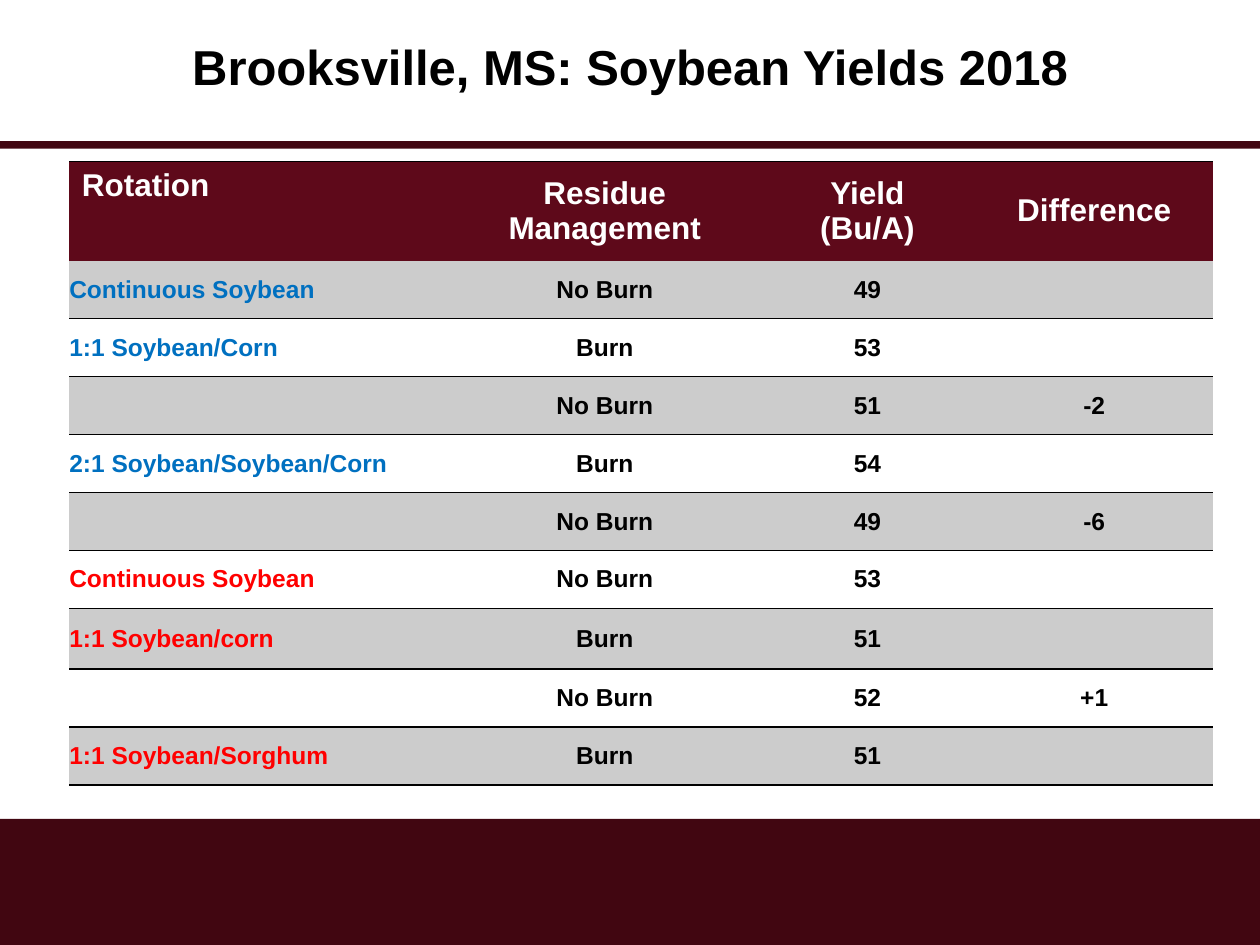
from lxml import etree
from pptx import Presentation
from pptx import util as u
from pptx.dml.color import RGBColor
from pptx.enum import shapes, text
from pptx.oxml import ns

COLORS = {
    "maroon": "410611",
    "header": "5E091A",
    "band": "CCCCCC",
    "black": "000000",
    "white": "FFFFFF",
    "blue": "0070C0",
    "red": "FF0000",
}
FONT = "Arial"
COLUMN_WIDTHS = [3.02, 2.46, 1.71, 1.89]
ROW_HEIGHTS = [0.79] + [0.46] * 6 + [0.48] + [0.46] * 2
HEADINGS = ["Rotation", "Residue Management", "Yield\n(Bu/A)", "Difference"]
YIELDS = [
    ("Continuous Soybean", "No Burn", "49", ""),
    ("1:1 Soybean/Corn", "Burn", "53", ""),
    ("", "No Burn", "51", "-2"),
    ("2:1 Soybean/Soybean/Corn", "Burn", "54", ""),
    ("", "No Burn", "49", "-6"),
    ("Continuous Soybean", "No Burn", "53", ""),
    ("1:1 Soybean/corn", "Burn", "51", ""),
    ("", "No Burn", "52", "+1"),
    ("1:1 Soybean/Sorghum", "Burn", "51", ""),
]
BLUE_ROWS = 5


def color(name):
    return RGBColor.from_string(COLORS[name])


def add_bar(page, left, top, width, height):
    bar = page.shapes.add_shape(
        shapes.MSO_SHAPE.RECTANGLE,
        u.Inches(left), u.Inches(top), u.Inches(width), u.Inches(height))
    bar.shadow.inherit = False
    bar.fill.solid()
    bar.fill.fore_color.rgb = color("maroon")
    bar.line.fill.background()


def format_text(frame, size, color_name, align):
    for para in frame.paragraphs:
        para.alignment = align
        for span in para.runs:
            span.font.name = FONT
            span.font.size = u.Pt(size)
            span.font.bold = True
            span.font.color.rgb = color(color_name)


def add_title(page, left, top, width, height):
    title = page.shapes.title
    title.left, title.top = u.Inches(left), u.Inches(top)
    title.width, title.height = u.Inches(width), u.Inches(height)
    frame = title.text_frame
    frame.text = "Brooksville, MS: Soybean Yields 2018"
    frame.word_wrap = True
    frame.auto_size = text.MSO_AUTO_SIZE.NONE
    frame.vertical_anchor = text.MSO_ANCHOR.MIDDLE
    frame.paragraphs[0].line_spacing = 0.9
    format_text(frame, 28, "black", text.PP_ALIGN.CENTER)


def set_borders(cell, ruled_sides):
    properties = cell._tc.get_or_add_tcPr()
    for side in "LRTB":
        line = etree.SubElement(properties, ns.qn(f"a:ln{side}"), w=str(u.Pt(1)))
        if side in ruled_sides:
            fill = etree.SubElement(line, ns.qn("a:solidFill"))
            etree.SubElement(fill, ns.qn("a:srgbClr"), val=COLORS["black"])
        else:
            etree.SubElement(line, ns.qn("a:noFill"))


def format_cell(cell, row, column):
    is_header = row == 0
    if is_header:
        ruled_sides = "T"
    elif row == 1:
        ruled_sides = "B"
    else:
        ruled_sides = "TB"
    set_borders(cell, ruled_sides)

    if is_header or row % 2:
        cell.fill.solid()
        cell.fill.fore_color.rgb = color("header" if is_header else "band")
    else:
        cell.fill.background()

    if not is_header:
        cell.margin_left = cell.margin_right = 0
        cell.margin_top = cell.margin_bottom = 0
    if not (is_header and column == 0):
        cell.vertical_anchor = text.MSO_ANCHOR.MIDDLE

    if is_header:
        color_name = "white"
    elif column == 0:
        color_name = "blue" if row <= BLUE_ROWS else "red"
    else:
        color_name = "black"
    align = text.PP_ALIGN.CENTER if column else text.PP_ALIGN.LEFT
    format_text(cell.text_frame, 18 if is_header else 14, color_name, align)


def add_yield_table(page, left, top):
    rows = [HEADINGS] + YIELDS
    table = page.shapes.add_table(
        len(rows), len(HEADINGS), u.Inches(left), u.Inches(top),
        u.Inches(sum(COLUMN_WIDTHS)), u.Inches(sum(ROW_HEIGHTS))).table
    for column, width in zip(table.columns, COLUMN_WIDTHS):
        column.width = u.Inches(width)
    for row, height in zip(table.rows, ROW_HEIGHTS):
        row.height = u.Inches(height)
    for row, values in enumerate(rows):
        for column, value in enumerate(values):
            cell = table.cell(row, column)
            cell.text = value
            format_cell(cell, row, column)


def main():
    deck = Presentation()
    deck.slide_width, deck.slide_height = u.Inches(10), u.Inches(7.5)
    page = deck.slides.add_slide(deck.slide_layouts[5])
    add_bar(page, 0, 6.5, 10, 1)
    add_title(page, 0, 0, 10, 1.11)
    add_bar(page, 0, 1.12, 10, 0.06)
    add_yield_table(page, 0.55, 1.28)
    deck.save("out.pptx")


if __name__ == "__main__":
    main()
